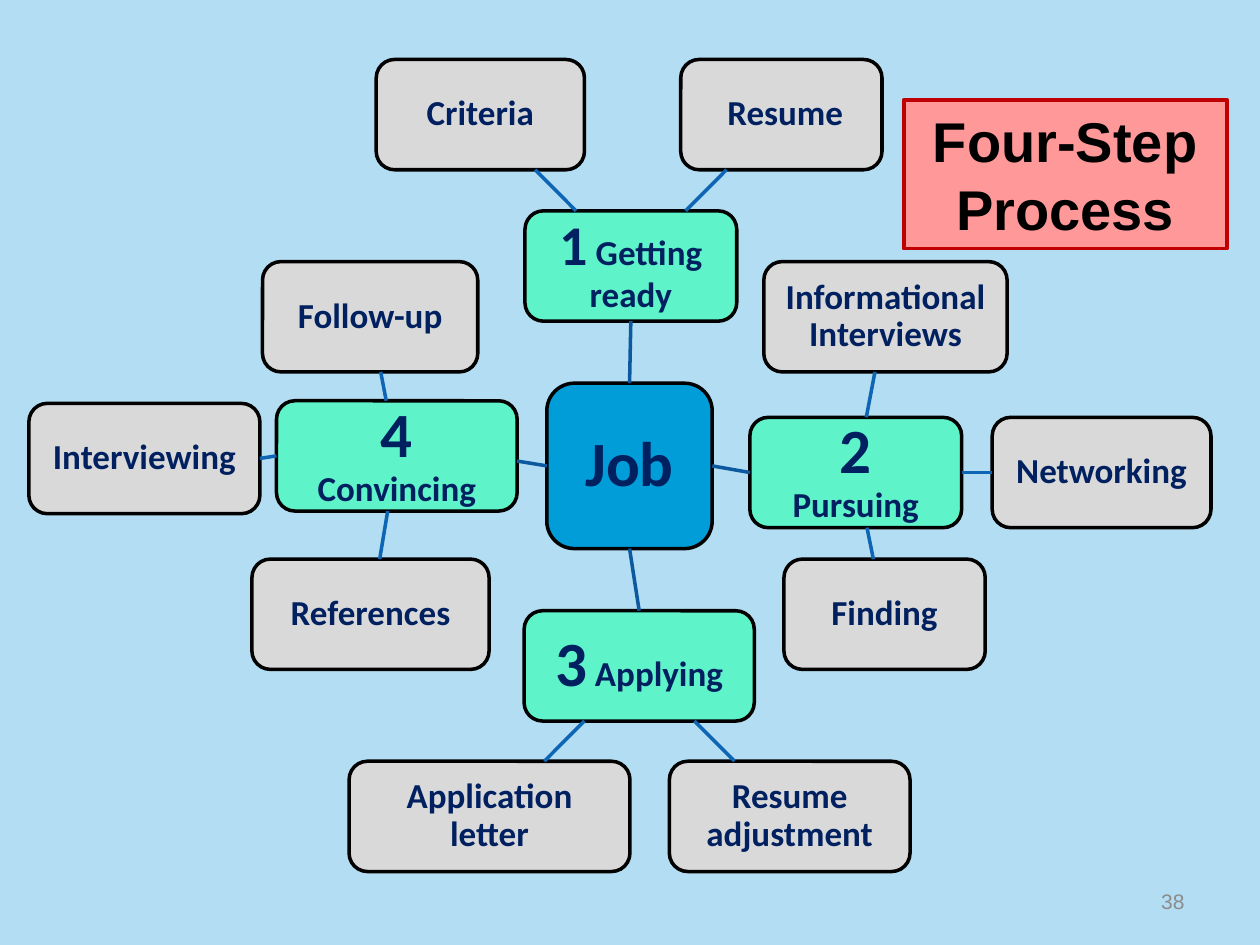
from dataclasses import dataclass

from lxml.etree import SubElement
from pptx import Presentation
from pptx.dml.color import RGBColor
from pptx.enum.shapes import MSO_CONNECTOR, MSO_SHAPE
from pptx.enum.text import MSO_ANCHOR, MSO_AUTO_SIZE, PP_ALIGN
from pptx.oxml.ns import qn
from pptx.util import Pt


@dataclass(frozen=True)
class Theme:
    background: str = "B3DDF2"
    hub: str = "009DD9"
    step: str = "5FF3CA"
    topic: str = "D9D9D9"
    text: str = "002060"
    outline: str = "000000"
    hub_line: str = "0C599F"
    topic_line: str = "0E65B4"
    title_fill: str = "FF9999"
    title_line: str = "C00000"
    title_text: str = "000000"
    page_number: str = "8C8C8C"
    map_font: str = "Calibri"
    page_font: str = "Arial"
    hub_size: int = 36
    topic_size: int = 20
    title_size: int = 32
    number_size: int = 12


THEME = Theme()
BOX_HEIGHT = 63
GLUE_TOLERANCE = 2.5
TOP, LEFT, BOTTOM, RIGHT = range(4)

# Boxes are (left, top, width, height); lengths are in points.
HUB_BOX = (312.5, 219, 94.5, 94.5)
TITLE_BOX = (516.5, 57, 184.5, 85)
NUMBER_BOX = (516, 500.5, 168, 28.75)

# Step: digit, digit size, label, (left, top, width), topics as (label, left, top, width)
STEPS = [
    ("1", 32, " Getting ready", (300, 120.5, 121), [
        ("Criteria", 215, 34, 119),
        (" Resume", 389, 34, 115),
    ]),
    ("2", 36, " Pursuing", (428.5, 238.5, 121), [
        ("Informational Interviews", 436.5, 149.5, 139),
        ("Networking", 567, 238.5, 125),
        ("Finding", 448, 319.5, 115),
    ]),
    ("3", 36, " Applying", (299.5, 349, 131.5), [
        ("Resume adjustment", 382.5, 435, 137.5),
        ("Application letter", 199.5, 435, 160.5),
    ]),
    ("4", 36, " Convincing", (158, 229, 137.5), [
        ("References", 144, 319.5, 135.5),
        ("Interviewing", 16.5, 230.5, 132),
        ("Follow-up", 150, 149.5, 123),
    ]),
]


def rgb(value):
    return RGBColor.from_string(value)


def apply(target, formats):
    for name, value in formats.items():
        setattr(target, name, value)


def paint(shape, fill, line, width):
    shape.fill.solid()
    shape.fill.fore_color.rgb = rgb(fill)
    shape.line.color.rgb = rgb(line)
    shape.line.width = Pt(width)


def write(frame, spans, color, font, align=PP_ALIGN.CENTER, bold=True, spacing=1.0, margins=(7.2, 3.6)):
    """Fill the frame with one paragraph of (text, size) spans."""
    across, down = map(Pt, margins)
    apply(frame, {
        "word_wrap": True, "auto_size": MSO_AUTO_SIZE.NONE,
        "vertical_anchor": MSO_ANCHOR.MIDDLE,
        "margin_left": across, "margin_right": across,
        "margin_top": down, "margin_bottom": down,
    })
    para = frame.paragraphs[0]
    apply(para, {"alignment": align, "line_spacing": spacing})
    for text, size in spans:
        span = para.add_run()
        span.text = text
        apply(span.font, {"name": font, "size": Pt(size), "bold": bold})
        span.font.color.rgb = rgb(color)


def add_node(page, box, spans, fill, margin):
    node = page.shapes.add_shape(MSO_SHAPE.ROUNDED_RECTANGLE, *map(Pt, box))
    node.shadow.inherit = False
    paint(node, fill, THEME.outline, 2)
    write(node.text_frame, spans, THEME.text, THEME.map_font, spacing=0.9, margins=(margin, margin))
    return node


def edge_point(box, toward):
    """Where the line from the box's centre to the other box's centre leaves the box.

    Returns x, y and the side whose middle is there, or None for the side."""
    left, top, width, height = box
    x, y = left + width / 2, top + height / 2
    dx = toward[0] + toward[2] / 2 - x
    dy = toward[1] + toward[3] / 2 - y
    scale = 1 / max(abs(dx) / (width / 2), abs(dy) / (height / 2))
    across, down = dx * scale, dy * scale
    if abs(dx) * height > abs(dy) * width:
        side, offset = (RIGHT if dx > 0 else LEFT), down
    else:
        side, offset = (BOTTOM if dy > 0 else TOP), across
    return x + across, y + down, side if abs(offset) < GLUE_TOLERANCE else None


def link(page, start, start_box, finish, finish_box, color):
    x1, y1, start_side = edge_point(start_box, finish_box)
    x2, y2, finish_side = edge_point(finish_box, start_box)
    line = page.shapes.add_connector(MSO_CONNECTOR.STRAIGHT, Pt(x1), Pt(y1), Pt(x2), Pt(y2))
    if start_side is not None:
        line.begin_connect(start, start_side)
    if finish_side is not None:
        line.end_connect(finish, finish_side)
    line.line.color.rgb = rgb(color)
    line.line.width = Pt(2)
    SubElement(line._element.spPr, qn("a:effectLst"))


def add_step(page, hub, digit, digit_size, label, place, topics):
    step_box = (*place, BOX_HEIGHT)
    spans = [(digit, digit_size), (label, THEME.topic_size)]
    step = add_node(page, step_box, spans, THEME.step, 10)
    link(page, hub, HUB_BOX, step, step_box, THEME.hub_line)
    for text, *topic_place in topics:
        topic_box = (*topic_place, BOX_HEIGHT)
        topic = add_node(page, topic_box, [(text, THEME.topic_size)], THEME.topic, 7.5)
        link(page, step, step_box, topic, topic_box, THEME.topic_line)


def add_title(page, box):
    title = page.shapes.title
    apply(title, dict(zip(("left", "top", "width", "height"), map(Pt, box))))
    paint(title, THEME.title_fill, THEME.title_line, 2.25)
    write(title.text_frame, [("Four-Step Process", THEME.title_size)], THEME.title_text, THEME.page_font)


def add_page_number(page, box):
    number = page.shapes.add_textbox(*map(Pt, box))
    write(number.text_frame, [("38", THEME.number_size)], THEME.page_number, THEME.page_font,
          align=PP_ALIGN.RIGHT, bold=False)


def main():
    deck = Presentation()
    deck.slide_width, deck.slide_height = Pt(720), Pt(540)
    page = deck.slides.add_slide(deck.slide_layouts[5])
    page.background.fill.solid()
    page.background.fill.fore_color.rgb = rgb(THEME.background)
    hub = add_node(page, HUB_BOX, [("Job", THEME.hub_size)], THEME.hub, 12)
    for step in STEPS:
        add_step(page, hub, *step)
    add_title(page, TITLE_BOX)
    add_page_number(page, NUMBER_BOX)
    deck.save("out.pptx")


if __name__ == "__main__":
    main()
